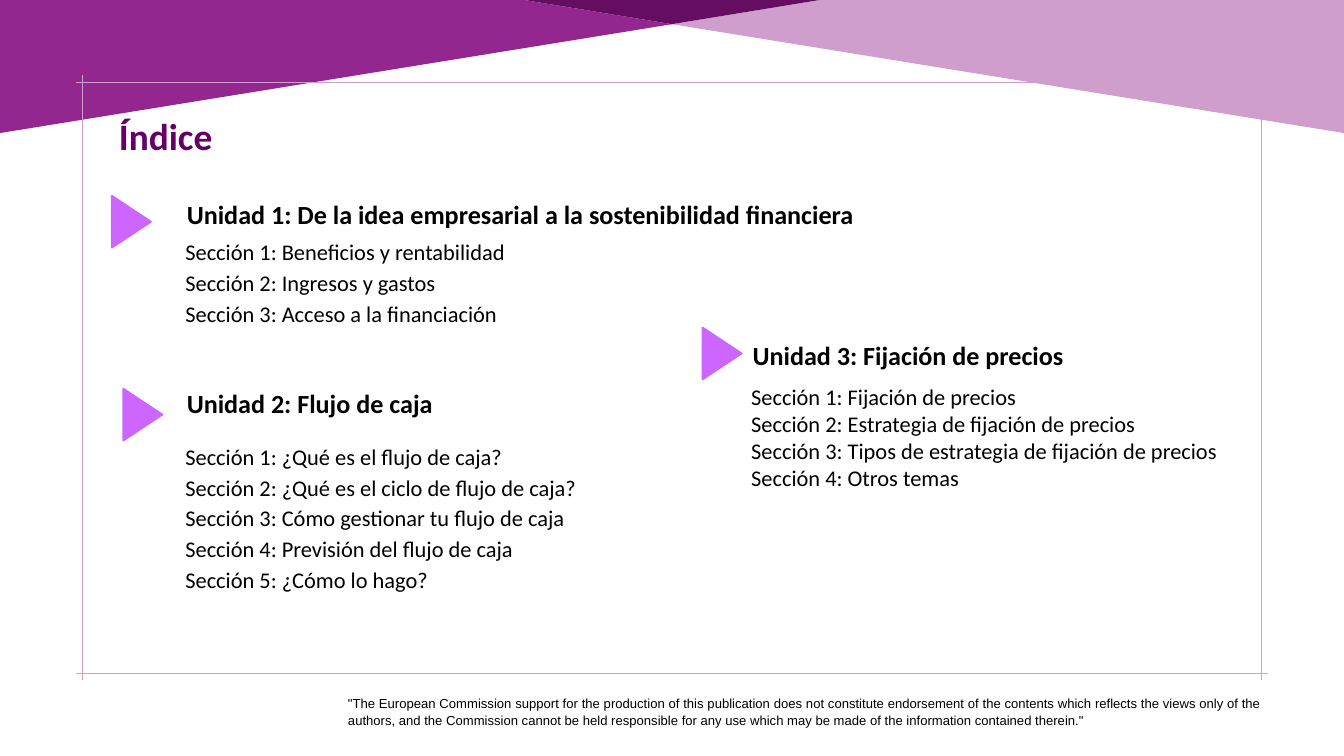
from lxml import etree
from pptx import Presentation
from pptx.dml.color import RGBColor
from pptx.enum.shapes import MSO_CONNECTOR as CONNECTOR, MSO_SHAPE as SHAPE
from pptx.enum.text import MSO_AUTO_SIZE as AUTO_SIZE, PP_ALIGN as ALIGN
from pptx.oxml.ns import qn
from pptx.util import Inches, Pt

COLORS = {
    "purple": "93268F",
    "lilac": "CF9ECC",
    "plum": "640D61",
    "title": "660066",
    "marker": "CC66FF",
    "text": "000000",
}

FONTS = {
    "title": {"name": "Calibri", "size": Pt(40), "bold": True},
    "unit": {"name": "Calibri", "size": Pt(28), "bold": True},
    "section": {"name": "Calibri", "size": Pt(24), "bold": False},
    "disclaimer": {"name": "Arial", "size": Pt(14), "bold": False},
}

BANDS = [
    ("purple", [(0, 1.98), (0, 0), (7.8, 0), (10, 0.36)]),
    ("lilac", [(20, 1.98), (10, 0.36), (12.2, 0), (20, 0)]),
    ("plum", [(10, 0.36), (7.8, 0), (12.2, 0)]),
]

FRAME = {"left": 1.23, "top": 1.22, "right": 18.77, "bottom": 10.02}
OVERHANG = 0.1

UNITS = [
    {
        "heading": "Unidad 1: De la idea empresarial a la sostenibilidad financiera",
        "heading_box": (2.66, 2.84, 10.85, 0.64),
        "heading_spacing": 1.15,
        "sections": [
            "Beneficios y rentabilidad",
            "Ingresos y gastos",
            "Acceso a la financiación",
        ],
        "sections_box": (2.66, 3.44, 7.56, 1.49),
        "sections_spacing": 1.15,
        "marker": (1.57, 3.01),
    },
    {
        "heading": "Unidad 2: Flujo de caja",
        "heading_box": (2.66, 5.72, 6.26, 0.57),
        "heading_spacing": 1.0,
        "sections": [
            "¿Qué es el flujo de caja?",
            "¿Qué es el ciclo de flujo de caja?",
            "Cómo gestionar tu flujo de caja",
            "Previsión del flujo de caja",
            "¿Cómo lo hago?",
        ],
        "sections_box": (2.66, 6.48, 6.54, 2.42),
        "sections_spacing": 1.15,
        "marker": (1.74, 5.88),
    },
    {
        "heading": "Unidad 3: Fijación de precios",
        "heading_box": (11.08, 5, 7.35, 0.57),
        "heading_spacing": 1.0,
        "sections": [
            "Fijación de precios",
            "Estrategia de fijación de precios",
            "Tipos de estrategia de fijación de precios",
            "Otros temas",
        ],
        "sections_box": (11.08, 5.65, 7.35, 1.72),
        "sections_spacing": 1.0,
        "marker": (10.36, 4.97),
    },
]

DISCLAIMER = (
    '"The European Commission support for the production of this publication does not '
    "constitute endorsement of the contents which reflects the views only of the authors, "
    "and the Commission cannot be held responsible for any use which may be made of the "
    'information contained therein."'
)


def rgb(color):
    return RGBColor.from_string(COLORS[color])


def add_band(slide, color, corners):
    points = [(Inches(x), Inches(y)) for x, y in corners]
    outline = slide.shapes.build_freeform(*points[0], scale=1.0)
    outline.add_line_segments(points[1:], close=True)
    band = outline.convert_to_shape()
    band.shadow.inherit = False
    band.fill.solid()
    band.fill.fore_color.rgb = rgb(color)
    band.line.fill.background()


def add_rule(slide, x1, y1, x2, y2):
    rule = slide.shapes.add_connector(
        CONNECTOR.STRAIGHT, Inches(x1), Inches(y1), Inches(x2), Inches(y2)
    )
    rule.line.color.rgb = rgb("lilac")
    rule.line.width = Pt(0.5)
    etree.SubElement(rule._element.spPr, qn("a:effectLst"))


def add_frame(slide):
    left, top, right, bottom = FRAME.values()
    for y in (top, bottom):
        add_rule(slide, left - OVERHANG, y, right + OVERHANG, y)
    for x in (left, right):
        add_rule(slide, x, top - OVERHANG, x, bottom + OVERHANG)


def add_text(slide, box, lines, style, color="text", spacing=1.0, inset=0.1, align=ALIGN.LEFT):
    frame = slide.shapes.add_textbox(*map(Inches, box)).text_frame
    layout = {
        "word_wrap": True,
        "auto_size": AUTO_SIZE.SHAPE_TO_FIT_TEXT,
        "margin_left": Inches(inset),
        "margin_right": Inches(inset),
    }
    for name, value in layout.items():
        setattr(frame, name, value)
    for index, line in enumerate(lines):
        paragraph = frame.add_paragraph() if index else frame.paragraphs[0]
        paragraph.alignment = align
        paragraph.line_spacing = spacing
        run = paragraph.add_run()
        run.text = line
        for name, value in FONTS[style].items():
            setattr(run.font, name, value)
        run.font.color.rgb = rgb(color)


def add_marker(slide, left, top):
    marker = slide.shapes.add_shape(
        SHAPE.ISOSCELES_TRIANGLE, Inches(left), Inches(top), Inches(0.77), Inches(0.58)
    )
    marker.rotation = 90
    marker.shadow.inherit = False
    marker.fill.solid()
    marker.fill.fore_color.rgb = rgb("marker")
    marker.line.color.rgb = rgb("marker")
    marker.line.width = Pt(2)


def add_unit(slide, unit):
    sections = [f"Sección {n}: {topic}" for n, topic in enumerate(unit["sections"], 1)]
    add_text(slide, unit["sections_box"], sections, "section", spacing=unit["sections_spacing"])
    add_text(slide, unit["heading_box"], [unit["heading"]], "unit",
             spacing=unit["heading_spacing"], inset=0.12)
    add_marker(slide, *unit["marker"])


def main():
    deck = Presentation()
    deck.slide_width = Inches(20)
    deck.slide_height = Inches(11.25)
    slide = deck.slides.add_slide(deck.slide_layouts[6])

    for color, corners in BANDS:
        add_band(slide, color, corners)
    add_frame(slide)
    add_text(slide, (5.08, 10.29, 13.79, 0.52), [DISCLAIMER], "disclaimer",
             spacing=1.07, align=ALIGN.JUSTIFY)
    add_text(slide, (1.67, 1.64, 10.35, 0.77), ["Índice"], "title", color="title")
    for unit in UNITS:
        add_unit(slide, unit)

    deck.save("out.pptx")


if __name__ == "__main__":
    main()
